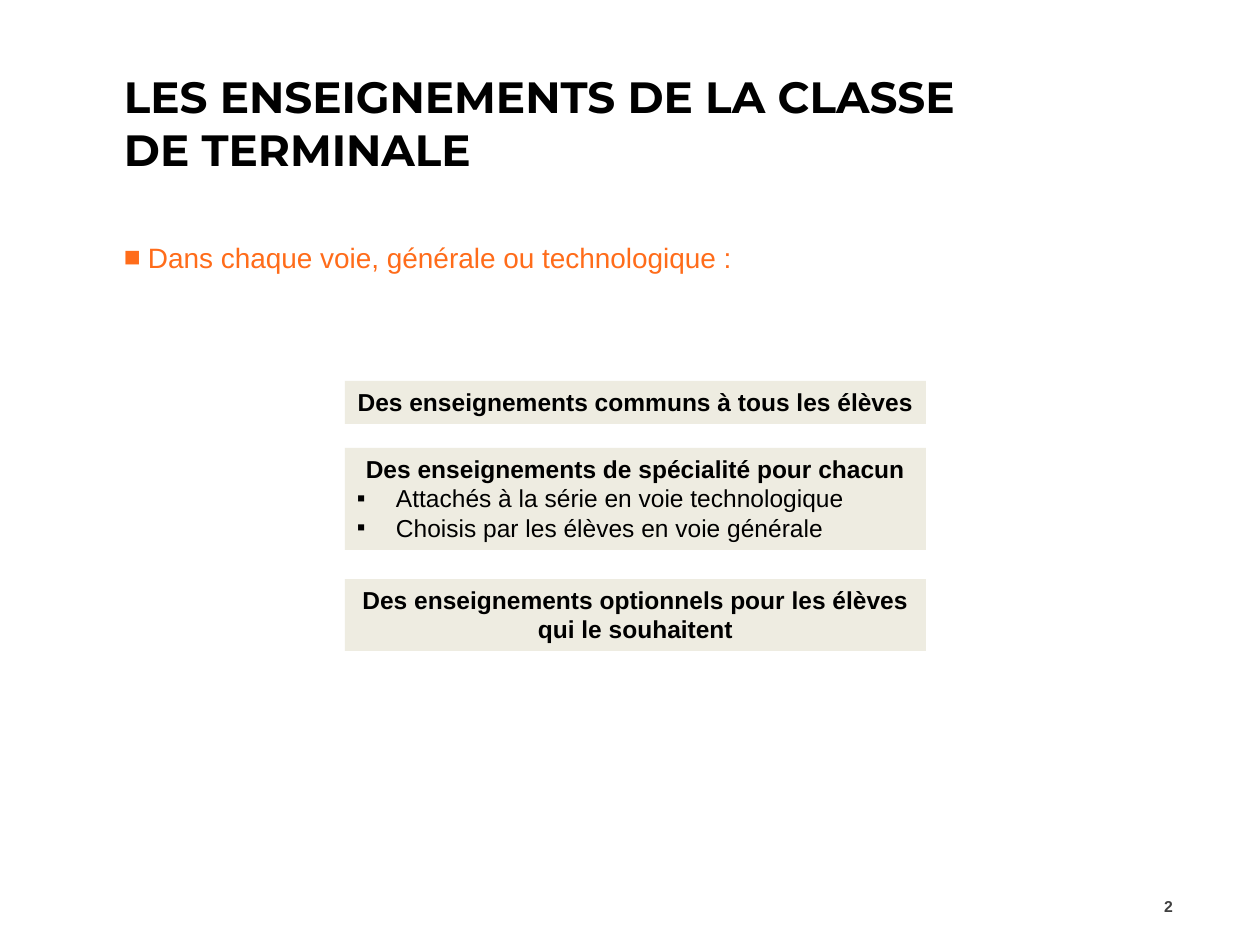
from lxml.etree import SubElement
from pptx import Presentation
from pptx.dml.color import RGBColor
from pptx.enum.shapes import MSO_SHAPE as Shape
from pptx.enum.text import MSO_ANCHOR as Anchor, MSO_AUTO_SIZE as Auto, PP_ALIGN as Align
from pptx.oxml.ns import qn
from pptx.util import Pt

BLACK, ORANGE, GREY, BEIGE = "000000", "FF6C1A", "404040", "EEECE1"


def px(n):
    return round(n * 914400 / 126)


def rgb(code):
    return RGBColor.from_string(code)


def write(frame, text, first=True, size=14, color=BLACK, bold=False,
          font="Arial", align=Align.LEFT, mark=None, indent=0):
    para = frame.paragraphs[0] if first else frame.add_paragraph()
    para.text = text
    para.alignment = align
    if mark:
        props = para._p.get_or_add_pPr()
        props.set("marL", str(px(indent)))
        props.set("indent", str(-px(indent)))
        SubElement(props, qn("a:buFont")).set("typeface", "Arial")
        SubElement(props, qn("a:buChar")).set("char", mark)
    for run in para.runs:
        run.font.size, run.font.bold, run.font.name = Pt(size), bold, font
        run.font.color.rgb = rgb(color)


def setup(frame, anchor=Anchor.TOP, top=6):
    frame.word_wrap = True
    frame.vertical_anchor = anchor
    frame.margin_left = frame.margin_right = px(12)
    frame.margin_top, frame.margin_bottom = px(top), px(6)
    return frame


def add_text(slide, box, **style):
    return setup(slide.shapes.add_textbox(*map(px, box)).text_frame, **style)


def title(slide, box):
    write(add_text(slide, box), "LES ENSEIGNEMENTS DE LA CLASSE\vDE TERMINALE",
          size=25, bold=True, font="Montserrat")


def intro(slide, box):
    write(add_text(slide, box, top=47),
          "Dans chaque voie, générale ou technologique :",
          size=16, color=ORANGE, mark="■", indent=24)


def number(slide, box):
    write(add_text(slide, box, anchor=Anchor.MIDDLE), "2", size=9,
          color=GREY, bold=True, align=Align.RIGHT)


def card(slide, box, head, items=()):
    rect = slide.shapes.add_shape(Shape.RECTANGLE, *map(px, box))
    rect.shadow.inherit = False
    rect.fill.solid()
    rect.fill.fore_color.rgb = rgb(BEIGE)
    rect.line.fill.background()
    frame = setup(rect.text_frame)
    frame.auto_size = Auto.SHAPE_TO_FIT_TEXT
    write(frame, head, bold=True, align=Align.CENTER)
    for item in items:
        write(frame, item, first=False, mark="▪", indent=39)


def cards(slide, box):
    left, top, width = box
    # Offset from the top, height, heading, bullets
    rows = [
        (0, 43, "Des enseignements communs à tous les élèves", ()),
        (67, 102, "Des enseignements de spécialité pour chacun",
         ("Attachés à la série en voie technologique",
          "Choisis par les élèves en voie générale")),
        (198, 72, "Des enseignements optionnels pour les élèves qui le souhaitent", ()),
    ]
    for drop, height, head, items in rows:
        card(slide, (left, top + drop, width, height), head, items)


def main():
    deck = Presentation()
    deck.slide_width, deck.slide_height = px(1260), px(945)
    slide = deck.slides.add_slide(deck.slide_layouts[6])
    title(slide, (112, 64, 1086, 163))
    intro(slide, (112, 203, 1086, 634))
    cards(slide, (345, 381, 581))
    number(slide, (1123, 881, 62, 50))
    deck.save("out.pptx")


if __name__ == "__main__":
    main()
